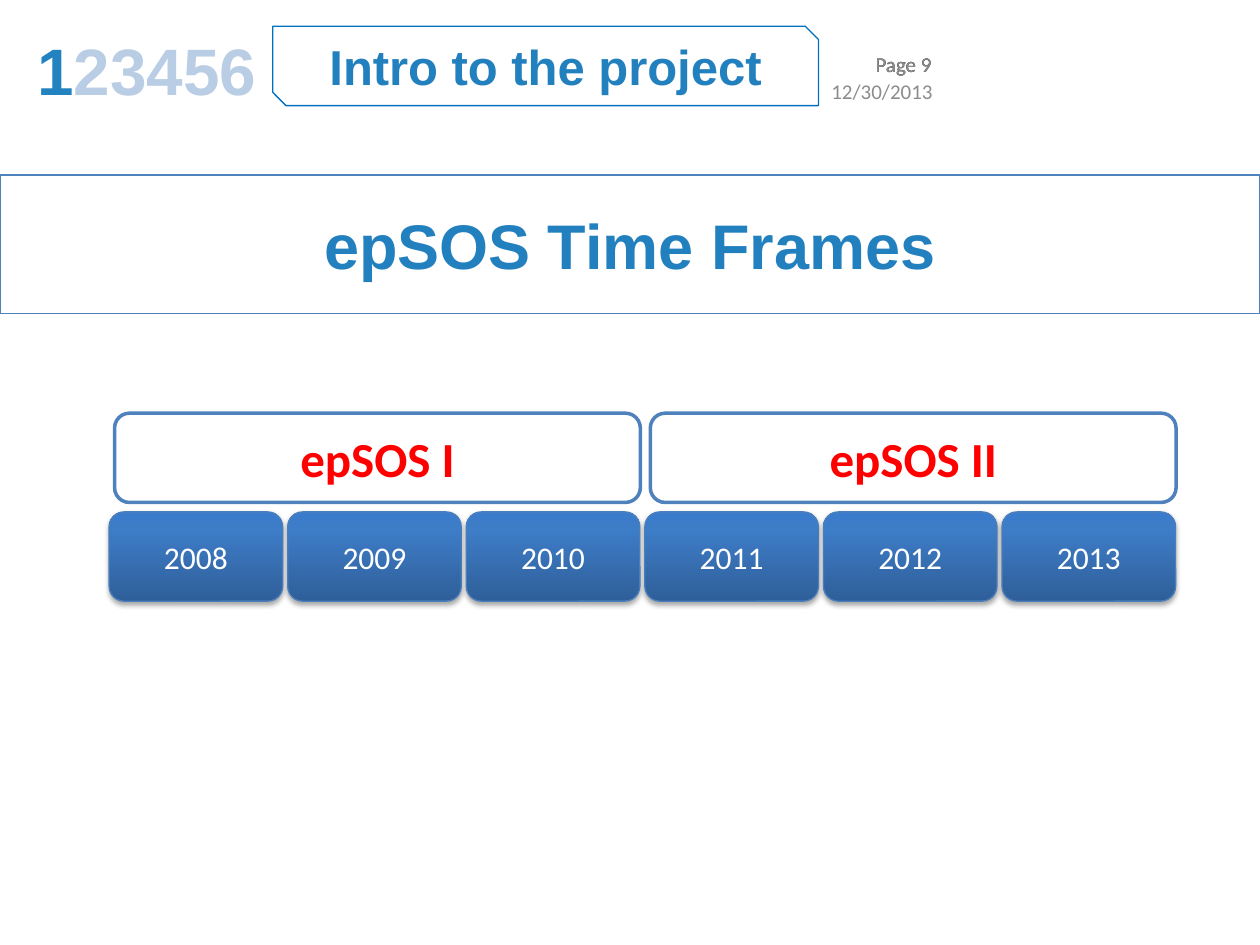
from dataclasses import dataclass

from lxml import etree
from pptx import Presentation
from pptx import util as u
from pptx.dml.color import RGBColor
from pptx.enum import shapes, text
from pptx.oxml.ns import qn


@dataclass(frozen=True)
class Theme:
    heading: str = "Arial"
    body: str = "Calibri"
    blue: str = "2380BF"
    current: str = "2382C0"
    pale: str = "B9CDE5"
    outline: str = "4F81BD"
    header_line: str = "0070C0"
    year_line: str = "4B7EBC"
    red: str = "FF0000"
    white: str = "FFFFFF"
    black: str = "000000"
    grey: str = "8C8C8C"
    year_gradient: tuple = ((0, "2F5F99"), (80, "3D7CC7"), (100, "3A7CCB"))
    banner_size: float = 36
    section_size: float = 37.5
    title_size: float = 28
    year_size: float = 18
    small_size: float = 12


class SlideBuilder:
    """Draws the themed elements of one slide."""

    def __init__(self, slide, theme):
        self.slide = slide
        self.theme = theme

    def set_text(self, shape, wording, size, color, font, bold=False, align=text.PP_ALIGN.CENTER):
        frame = shape.text_frame
        frame.word_wrap = True
        frame.vertical_anchor = text.MSO_ANCHOR.MIDDLE
        paragraph = frame.paragraphs[0]
        paragraph.text = wording
        paragraph.alignment = align
        paragraph.font.name = font
        paragraph.font.size = u.Pt(size)
        paragraph.font.bold = bold
        if color:
            paragraph.font.color.rgb = RGBColor.from_string(color)
        return paragraph

    def label(self, box, wording, color, align):
        shape = self.slide.shapes.add_textbox(*map(u.Cm, box))
        self.set_text(shape, wording, self.theme.small_size, color, self.theme.body, align=align)

    def section_numbers(self, box, numbers):
        theme = self.theme
        shape = self.slide.shapes.add_textbox(*map(u.Cm, box))
        paragraph = self.set_text(shape, "", theme.section_size, None, theme.heading, True,
                                  text.PP_ALIGN.JUSTIFY)
        paragraph.line_spacing = 0.8
        for wording, color in zip(numbers, (theme.current, theme.pale)):
            run = paragraph.add_run()
            run.text = wording
            run.font.color.rgb = RGBColor.from_string(color)

    def panel(self, kind, box, line, width=0.75, fill=None):
        shape = self.slide.shapes.add_shape(kind, *map(u.Cm, box))
        shape.shadow.inherit = False
        shape.line.color.rgb = RGBColor.from_string(line)
        shape.line.width = u.Pt(width)
        if fill:
            shape.fill.solid()
            shape.fill.fore_color.rgb = RGBColor.from_string(fill)
        else:
            shape.fill.background()
        return shape

    def heading(self, kind, box, wording, size, line):
        shape = self.panel(kind, box, line)
        self.set_text(shape, wording, size, self.theme.blue, self.theme.heading, True)

    def phase(self, box, wording):
        theme = self.theme
        shape = self.panel(shapes.MSO_SHAPE.ROUNDED_RECTANGLE, box, theme.outline, 2, theme.white)
        self.set_text(shape, wording, theme.title_size, theme.red, theme.body, True)

    def year(self, box, wording):
        theme = self.theme
        shape = self.panel(shapes.MSO_SHAPE.ROUNDED_RECTANGLE, box, theme.year_line)
        shape.fill.gradient()
        shape.fill.gradient_angle = 90
        properties = shape._element.spPr
        stops = properties.find(qn("a:gradFill")).find(qn("a:gsLst"))
        stops.clear()
        for position, color in theme.year_gradient:
            stop = etree.SubElement(stops, qn("a:gs"), pos=str(position * 1000))
            etree.SubElement(stop, qn("a:srgbClr"), val=color)
        shadow = etree.SubElement(properties.find(qn("a:effectLst")), qn("a:outerShdw"),
                                  blurRad=str(u.Pt(3.1)), dist=str(u.Pt(1.8)),
                                  dir="5400000", rotWithShape="0")
        shade = etree.SubElement(shadow, qn("a:srgbClr"), val=theme.black)
        etree.SubElement(shade, qn("a:alpha"), val="35000")
        self.set_text(shape, wording, theme.year_size, theme.white, theme.body)


def main():
    theme = Theme()
    presentation = Presentation()
    presentation.slide_width, presentation.slide_height = u.Cm(25.4), u.Cm(19.05)
    builder = SlideBuilder(presentation.slides.add_slide(presentation.slide_layouts[6]), theme)

    builder.heading(shapes.MSO_SHAPE.RECTANGLE, (0, 3.53, 25.4, 2.79),
                    "epSOS Time Frames", theme.banner_size, theme.outline)
    page_box = (16.08, 0.79, 2.95, 1.02)
    builder.label(page_box, "Page 9", theme.black, text.PP_ALIGN.RIGHT)
    builder.label((16.51, 1.32, 3.18, 1.02), "12/30/2013", theme.grey, text.PP_ALIGN.LEFT)
    builder.label(page_box, "Page 9", theme.grey, text.PP_ALIGN.RIGHT)
    builder.heading(shapes.MSO_SHAPE.SNIP_2_DIAG_RECTANGLE, (5.5, 0.53, 11, 1.6),
                    "Intro to the project", theme.title_size, theme.header_line)
    builder.section_numbers((0.5, 0.74, 18.6, 1.6), ("1", "23456"))

    for index, year in enumerate(range(2008, 2014)):
        builder.year((2.2 + 3.6 * index, 10.32, 3.5, 1.8), str(year))
    for index, phase in enumerate(("epSOS I", "epSOS II")):
        builder.phase((2.31 + 10.8 * index, 8.33, 10.6, 1.8), phase)

    presentation.save("out.pptx")


if __name__ == "__main__":
    main()
